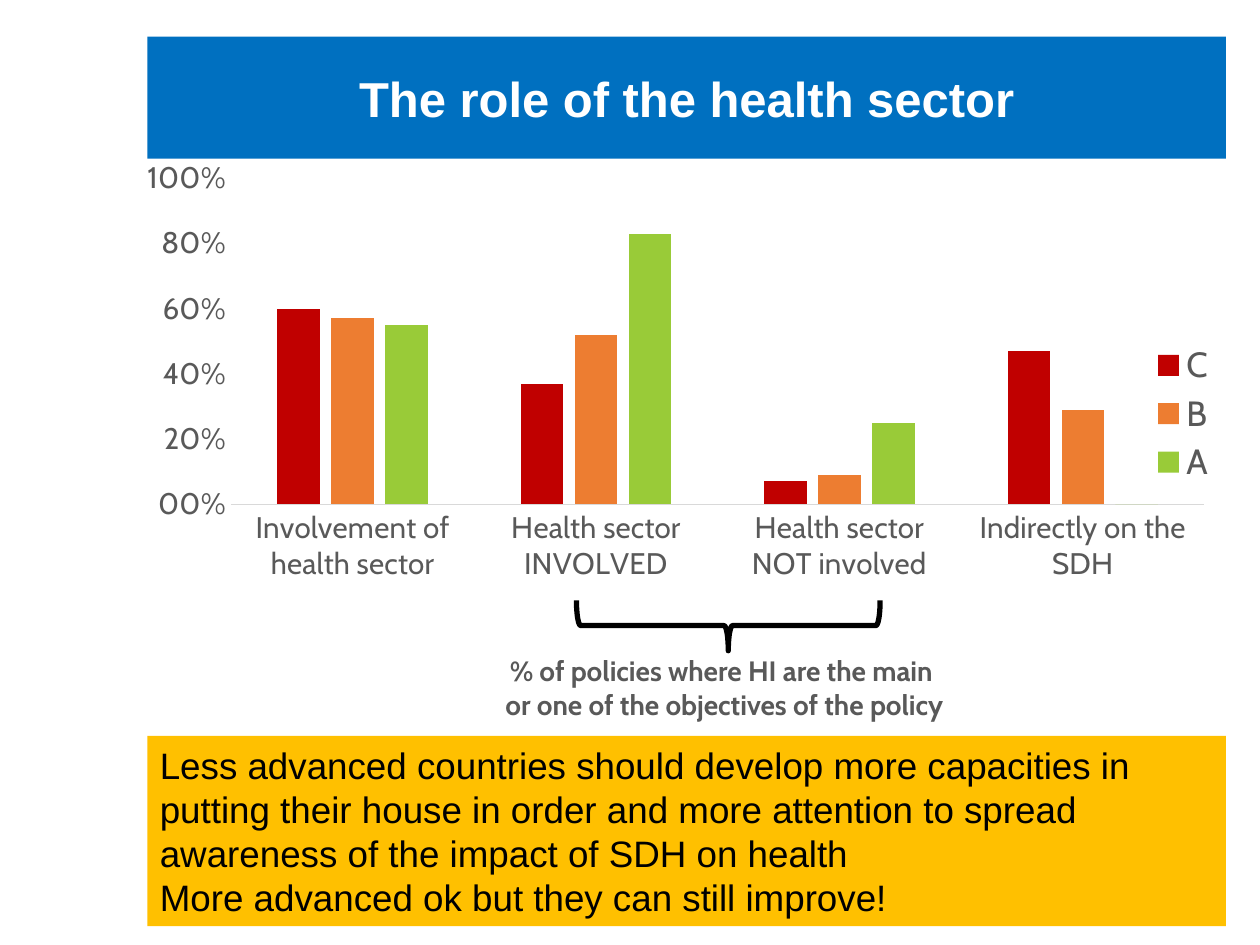
import pptx
import pptx.chart.data
import pptx.dml.color
import pptx.enum.chart
import pptx.enum.shapes
import pptx.enum.text
import pptx.oxml
import pptx.oxml.ns
import pptx.util

Inches, Pt = pptx.util.Inches, pptx.util.Pt
RGBColor = pptx.dml.color.RGBColor

WHITE = RGBColor(0xFF, 0xFF, 0xFF)
BLACK = RGBColor(0x00, 0x00, 0x00)
GRAY = RGBColor(0x59, 0x59, 0x59)
AXIS_GRAY = RGBColor(0xD9, 0xD9, 0xD9)
BLUE = RGBColor(0x00, 0x70, 0xC0)
GOLD = RGBColor(0xFF, 0xC0, 0x00)
RED = RGBColor(0xC0, 0x00, 0x00)
ORANGE = RGBColor(0xED, 0x7D, 0x31)
GREEN = RGBColor(0x99, 0xCB, 0x38)

LEFT, WIDTH = Inches(1.17), Inches(8.56)


def set_font(font, name, size, color, bold=False):
    font.name, font.size, font.bold = name, Pt(size), bold
    font.color.rgb = color


def set_layout(parent, index, x, y, w, h, target=""):
    """Place a chart part by fractions of the chart area."""
    for old in parent.findall(pptx.oxml.ns.qn("c:layout")):
        parent.remove(old)
    parent.insert(index, pptx.oxml.parse_xml(
        f'<c:layout {pptx.oxml.ns.nsdecls("c")}><c:manualLayout>{target}'
        '<c:xMode val="edge"/><c:yMode val="edge"/>'
        f'<c:x val="{x}"/><c:y val="{y}"/><c:w val="{w}"/><c:h val="{h}"/>'
        '</c:manualLayout></c:layout>'))


prs = pptx.Presentation()
prs.slide_width, prs.slide_height = Inches(10), Inches(7.5)
s = prs.slides.add_slide(prs.slide_layouts[6])

# Chart data
data = pptx.chart.data.CategoryChartData()
data.categories = ["Involvement of health sector", "Health sector INVOLVED",
                   "Health sector NOT involved", "Indirectly on the SDH"]
data.add_series("C", (0.6, 0.37, 0.07, 0.47))
data.add_series("B", (0.57, 0.52, 0.09, 0.29))
data.add_series("A", (0.55, 0.83, 0.25, 0))

# Column chart
chart = s.shapes.add_chart(
    pptx.enum.chart.XL_CHART_TYPE.COLUMN_CLUSTERED,
    LEFT, Inches(1.25), WIDTH, Inches(4.11), data).chart
set_font(chart.font, "Cabin", 10, BLACK)
chart.has_title = False
plot = chart.plots[0]
plot.gap_width, plot.overlap, plot.vary_by_categories = 219, -27, False
for series, color in zip(plot.series, (RED, ORANGE, GREEN)):
    series.format.fill.solid()
    series.format.fill.fore_color.rgb = color

# Axes
for axis in (chart.category_axis, chart.value_axis):
    axis.major_tick_mark = axis.minor_tick_mark = pptx.enum.chart.XL_TICK_MARK.NONE
    axis.has_major_gridlines = False
    set_font(axis.tick_labels.font, "Cabin", 17, GRAY)
chart.category_axis.format.line.color.rgb = AXIS_GRAY
chart.category_axis.format.line.width = Pt(0.75)
axis = chart.value_axis
axis.minimum_scale, axis.maximum_scale, axis.major_unit = 0, 1, 0.2
axis.format.line.fill.background()
axis.tick_labels.number_format = "#,#00%"
axis.tick_labels.number_format_is_linked = False

# Legend over the right end of the plot
chart.has_legend = True
chart.legend.position = pptx.enum.chart.XL_LEGEND_POSITION.RIGHT
chart.legend.include_in_layout = True
set_font(chart.legend.font, "Cabin", 20, GRAY)
set_layout(chart.element.xpath("c:chart/c:plotArea")[0], 0,
           0.07, 0.04, 0.91, 0.63, '<c:layoutTarget val="inner"/>')
set_layout(chart.element.xpath("c:chart/c:legend")[0], 1, 0.93, 0.35, 0.06, 0.29)

# Title and conclusion bands
bands = [
    (0.29, 0.97, BLUE, "The role of the health sector", 28, WHITE, True,
     pptx.enum.text.PP_ALIGN.CENTER),
    (5.84, 1.51, GOLD,
     "Less advanced countries should develop more capacities in putting their "
     "house in order and more attention to spread awareness of the impact of "
     "SDH on health\nMore advanced ok but they can still improve!",
     21, BLACK, False, pptx.enum.text.PP_ALIGN.LEFT),
]
for top, height, fill, text, size, color, bold, align in bands:
    sp = s.shapes.add_shape(pptx.enum.shapes.MSO_SHAPE.RECTANGLE,
                            LEFT, Inches(top), WIDTH, Inches(height))
    sp.shadow.inherit = False
    sp.fill.solid()
    sp.fill.fore_color.rgb = fill
    sp.line.fill.background()
    tf = sp.text_frame
    tf.word_wrap = True
    tf.vertical_anchor = pptx.enum.text.MSO_ANCHOR.MIDDLE
    tf.text = text
    for p in tf.paragraphs:
        p.alignment = align
        set_font(p.font, "Arial", size, color, bold)

# Brace joining the two middle categories
sp = s.shapes.add_shape(pptx.enum.shapes.MSO_SHAPE.LEFT_BRACE,
                        Inches(5.58), Inches(3.76), Inches(0.4), Inches(2.41))
sp.rotation = 270
sp.shadow.inherit = False
sp.fill.background()
sp.line.color.rgb = BLACK
sp.line.width = Pt(3)

# Brace caption
tf = s.shapes.add_textbox(Inches(3.25), Inches(5.14), Inches(5), Inches(0.64)).text_frame
tf.word_wrap = True
p = tf.paragraphs[0]
p.text = "% of policies where HI are the main \vor one of the objectives of the policy"
p.alignment = pptx.enum.text.PP_ALIGN.CENTER
set_font(p.font, "Cabin", 16, GRAY, True)

prs.save("out.pptx")
